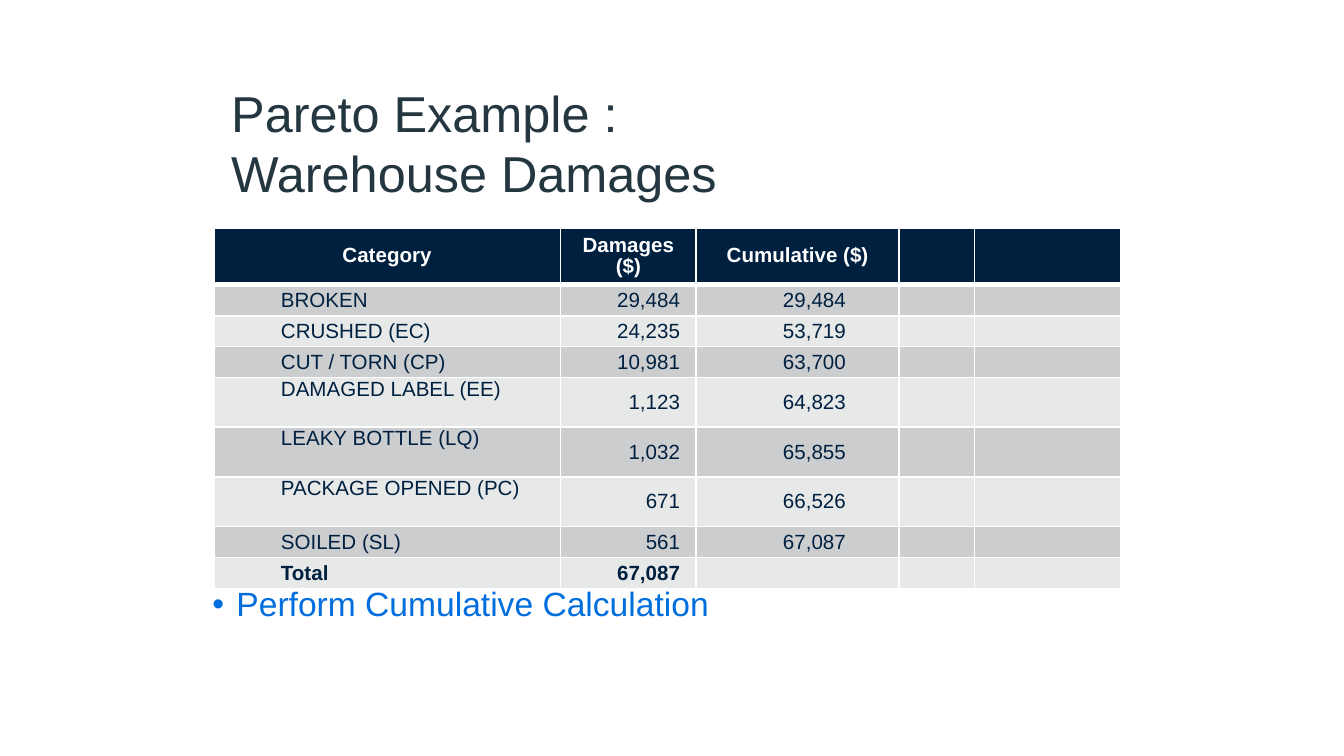
from lxml import etree
from pptx import Presentation
from pptx import util as u
from pptx.dml.color import RGBColor
from pptx.enum import text
from pptx.oxml.ns import qn

FONT = "Arial"
COLORS = {"title": "243640", "navy": "002040", "blue": "006EDC", "white": "FFFFFF",
          "dark_band": "CCCDCF", "light_band": "E7E8E8"}
LEFT, CENTER, RIGHT = text.PP_ALIGN.LEFT, text.PP_ALIGN.CENTER, text.PP_ALIGN.RIGHT
MIDDLE, TOP = text.MSO_ANCHOR.MIDDLE, text.MSO_ANCHOR.TOP

COLUMN_WIDTHS = (2.58, 1.01, 1.51, 0.56, 1.09)
COLUMN_ALIGNS = (LEFT, RIGHT, CENTER, CENTER, CENTER)
SIDE_MARGINS = ((0.5, 0), (0, 0.12), (0.25, 0), (0, 0), (0, 0))
HEADER_HEIGHT, ROW_HEIGHT, TALL_HEIGHT = 0.42, 0.23, 0.37
ROWS = (("Category", "Damages ($)", "Cumulative ($)"),
        ("BROKEN", "29,484", "29,484"),
        ("CRUSHED (EC)", "24,235", "53,719"),
        ("CUT / TORN (CP)", "10,981", "63,700"),
        ("DAMAGED LABEL (EE)", "1,123", "64,823"),
        ("LEAKY BOTTLE (LQ)", "1,032", "65,855"),
        ("PACKAGE OPENED (PC)", "671", "66,526"),
        ("SOILED (SL)", "561", "67,087"),
        ("Total", "67,087"))
TALL_ROWS = (4, 5, 6)


def color(name):
    return RGBColor.from_string(COLORS[name])


def format_runs(para, size, color_name, bold=False):
    for span in para.runs:
        span.font.name = FONT
        span.font.size = u.Pt(size)
        span.font.bold = bold
        span.font.color.rgb = color(color_name)


def add_title(page, wording):
    title = page.shapes.title
    title.left, title.top, title.width, title.height = map(u.Inches, (1.62, 0.64, 4.93, 0.84))
    title.fill.solid()
    title.fill.fore_color.rgb = color("white")
    frame = title.text_frame
    frame.text = wording
    frame.word_wrap = True
    frame.auto_size = text.MSO_AUTO_SIZE.NONE
    frame.vertical_anchor = MIDDLE
    frame.paragraphs[0].alignment = LEFT
    format_runs(frame.paragraphs[0], 27, "title")


def set_borders(cell, top, bottom):
    """Draw white borders; top and bottom are widths in points."""
    properties = cell._tc.get_or_add_tcPr()
    sides = (("a:lnL", 1), ("a:lnR", 1), ("a:lnT", top), ("a:lnB", bottom))
    for place, (tag, width) in enumerate(sides):
        line = etree.Element(qn(tag), w=str(u.Pt(width)))
        fill = etree.SubElement(line, qn("a:solidFill"))
        etree.SubElement(fill, qn("a:srgbClr"), val=COLORS["white"])
        properties.insert(place, line)


def fill_cell(cell, wording, fill, font_color, bold, align, margins):
    cell.fill.solid()
    cell.fill.fore_color.rgb = color(fill)
    cell.vertical_anchor = MIDDLE
    (cell.margin_left, cell.margin_top,
     cell.margin_right, cell.margin_bottom) = map(u.Inches, margins)
    para = cell.text_frame.paragraphs[0]
    if wording:
        cell.text_frame.text = wording
        para = cell.text_frame.paragraphs[0]
        format_runs(para, 11, font_color, bold)
    else:
        para._p.get_or_add_endParaRPr().set("sz", "1100")
    para.alignment = align


def add_damage_table(page):
    heights = [HEADER_HEIGHT] + [TALL_HEIGHT if i in TALL_ROWS else ROW_HEIGHT
                                 for i in range(1, len(ROWS))]
    frame = page.shapes.add_table(len(ROWS), len(COLUMN_WIDTHS), u.Inches(1.59), u.Inches(1.7),
                                  u.Inches(sum(COLUMN_WIDTHS)), u.Inches(sum(heights)))
    table = frame.table
    for column, width in zip(table.columns, COLUMN_WIDTHS):
        column.width = u.Inches(width)
    for i, (wordings, height) in enumerate(zip(ROWS, heights)):
        table.rows[i].height = u.Inches(height)
        band = "dark_band" if i % 2 else "light_band"
        for j, (left, right) in enumerate(SIDE_MARGINS):
            cell = table.cell(i, j)
            wording = wordings[j] if j < len(wordings) else ""
            if i == 0:
                fill_cell(cell, wording, "navy", "white", True, CENTER, (0.06, 0.03, 0.06, 0.03))
                cell.text_frame.paragraphs[0].line_spacing = 0.9
            else:
                fill_cell(cell, wording, band, "navy", i == len(ROWS) - 1,
                          COLUMN_ALIGNS[j], (left, 0, right, 0))
            set_borders(cell, 3 if i == 1 else 1, 3 if i == 0 else 1)
        if i in TALL_ROWS:
            table.cell(i, 0).vertical_anchor = TOP


def add_bullet_text(page, wording):
    box = page.shapes.add_textbox(*map(u.Inches, (1.58, 4.19, 5.63, 0.4)))
    frame = box.text_frame
    frame.word_wrap = True
    frame.margin_left = frame.margin_top = frame.margin_right = frame.margin_bottom = 0
    frame.text = wording
    para = frame.paragraphs[0]
    para.line_spacing = 1.5
    properties = para._p.get_or_add_pPr()
    properties.set("marL", str(u.Inches(0.18)))
    properties.set("indent", str(-u.Inches(0.18)))
    etree.SubElement(properties, qn("a:buFont")).set("typeface", FONT)
    etree.SubElement(properties, qn("a:buChar")).set("char", "•")
    format_runs(para, 18, "blue")


def main():
    deck = Presentation()
    deck.slide_width = u.Inches(10)
    deck.slide_height = deck.slide_width * 9 // 16
    page = deck.slides.add_slide(deck.slide_layouts[5])
    add_title(page, "Pareto Example : Warehouse Damages")
    add_damage_table(page)
    add_bullet_text(page, "Perform Cumulative Calculation")
    deck.save("out.pptx")


if __name__ == "__main__":
    main()
